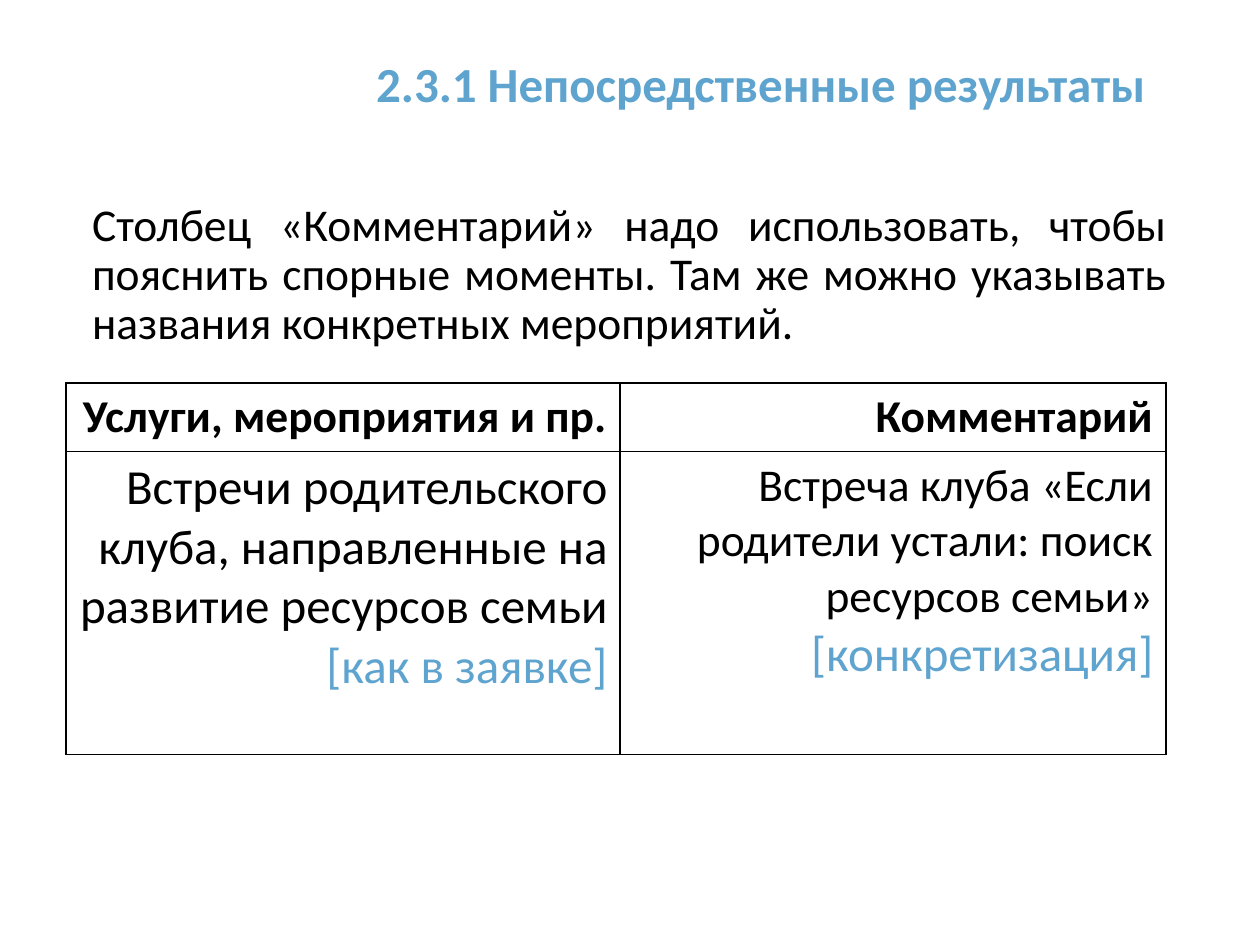
from dataclasses import dataclass

from lxml import etree
from pptx import Presentation
from pptx.dml.color import RGBColor
from pptx.enum.text import MSO_ANCHOR, MSO_AUTO_SIZE, PP_ALIGN
from pptx.oxml.ns import qn
from pptx.util import Emu, Pt

RIGHT = PP_ALIGN.RIGHT
JUSTIFY = PP_ALIGN.JUSTIFY
MIDDLE = MSO_ANCHOR.MIDDLE
TOP = MSO_ANCHOR.TOP
NO_FIT = MSO_AUTO_SIZE.NONE
EMU_PER_PX = 914400 / 126


@dataclass(frozen=True)
class Theme:
    font: str = "Calibri"
    ink: str = "000000"
    accent: str = "5EA4CF"
    paper: str = "FFFFFF"
    large: int = 28
    medium: int = 26
    border: int = 1


@dataclass(frozen=True)
class Box:
    left: int
    top: int
    width: int
    height: int


@dataclass(frozen=True)
class Line:
    text: str
    size: int
    color: str
    bold: bool = False


THEME = Theme()
INSET = 5
TITLE_BOX = Box(64, -24, 1086, 221)
BODY_BOX = Box(87, 197, 1086, 693)
TABLE_BOX = Box(66, 383, 1100, 371)
COLUMN_WIDTHS = (554, 546)
ROW_HEIGHTS = (68, 303)

TITLE = Line("2.3.1 Непосредственные результаты", THEME.large, THEME.accent, True)
ADVICE = Line(
    "Столбец «Комментарий» надо использовать, чтобы пояснить спорные моменты. "
    "Там же можно указывать названия конкретных мероприятий.",
    THEME.medium, THEME.ink,
)
RESULTS = (
    (
        (Line("Услуги, мероприятия и пр.", THEME.medium, THEME.ink, True),),
        (Line("Комментарий", THEME.medium, THEME.ink, True),),
    ),
    (
        (
            Line("Встречи родительского клуба, направленные на развитие ресурсов семьи",
                 THEME.large, THEME.ink),
            Line("[как в заявке]", THEME.large, THEME.accent),
        ),
        (
            Line("Встреча клуба «Если родители устали: поиск ресурсов семьи»",
                 THEME.medium, THEME.ink),
            Line("[конкретизация]", THEME.large, THEME.accent),
        ),
    ),
)


def px(length: int) -> Emu:
    return Emu(round(length * EMU_PER_PX))


def add_line(paragraph, line: Line, align) -> None:
    paragraph.alignment = align
    run = paragraph.add_run()
    run.text = line.text
    run.font.name = THEME.font
    run.font.size = Pt(line.size)
    run.font.bold = line.bold
    run.font.color.rgb = RGBColor.from_string(line.color)


def fill_placeholder(placeholder, box: Box, line: Line, align, anchor) -> None:
    placeholder.left, placeholder.top = px(box.left), px(box.top)
    placeholder.width, placeholder.height = px(box.width), px(box.height)
    frame = placeholder.text_frame
    frame.word_wrap = True
    frame.auto_size = NO_FIT
    frame.vertical_anchor = anchor
    frame.margin_left = frame.margin_right = px(INSET)
    frame.margin_top = frame.margin_bottom = px(INSET)
    paragraph = frame.paragraphs[0]
    paragraph.line_spacing = 0.9
    paragraph.space_before = Pt(0)
    properties = paragraph._p.get_or_add_pPr()
    properties.set("marL", "0")
    properties.set("indent", "0")
    etree.SubElement(properties, qn("a:buNone"))
    add_line(paragraph, line, align)


def add_borders(cell) -> None:
    properties = cell._tc.get_or_add_tcPr()
    for side in ("a:lnL", "a:lnR", "a:lnT", "a:lnB"):
        edge = etree.SubElement(properties, qn(side), w=str(Pt(THEME.border)))
        fill = etree.SubElement(edge, qn("a:solidFill"))
        etree.SubElement(fill, qn("a:srgbClr"), val=THEME.ink)


def fill_cell(cell, lines: tuple[Line, ...]) -> None:
    add_borders(cell)
    cell.fill.solid()
    cell.fill.fore_color.rgb = RGBColor.from_string(THEME.paper)
    frame = cell.text_frame
    for index, line in enumerate(lines):
        paragraph = frame.add_paragraph() if index else frame.paragraphs[0]
        add_line(paragraph, line, RIGHT)


def add_results(slide, box: Box) -> None:
    table = slide.shapes.add_table(
        len(ROW_HEIGHTS), len(COLUMN_WIDTHS),
        px(box.left), px(box.top), px(box.width), px(box.height),
    ).table
    table.first_row = False
    table.horz_banding = False
    for column, width in zip(table.columns, COLUMN_WIDTHS):
        column.width = px(width)
    for row, height, contents in zip(table.rows, ROW_HEIGHTS, RESULTS):
        row.height = px(height)
        for cell, lines in zip(row.cells, contents):
            fill_cell(cell, lines)


def main() -> None:
    presentation = Presentation()
    presentation.slide_width = px(1260)
    presentation.slide_height = px(945)
    slide = presentation.slides.add_slide(presentation.slide_layouts[1])
    fill_placeholder(slide.shapes.title, TITLE_BOX, TITLE, RIGHT, MIDDLE)
    fill_placeholder(slide.placeholders[1], BODY_BOX, ADVICE, JUSTIFY, TOP)
    add_results(slide, TABLE_BOX)
    presentation.save("out.pptx")


if __name__ == "__main__":
    main()
